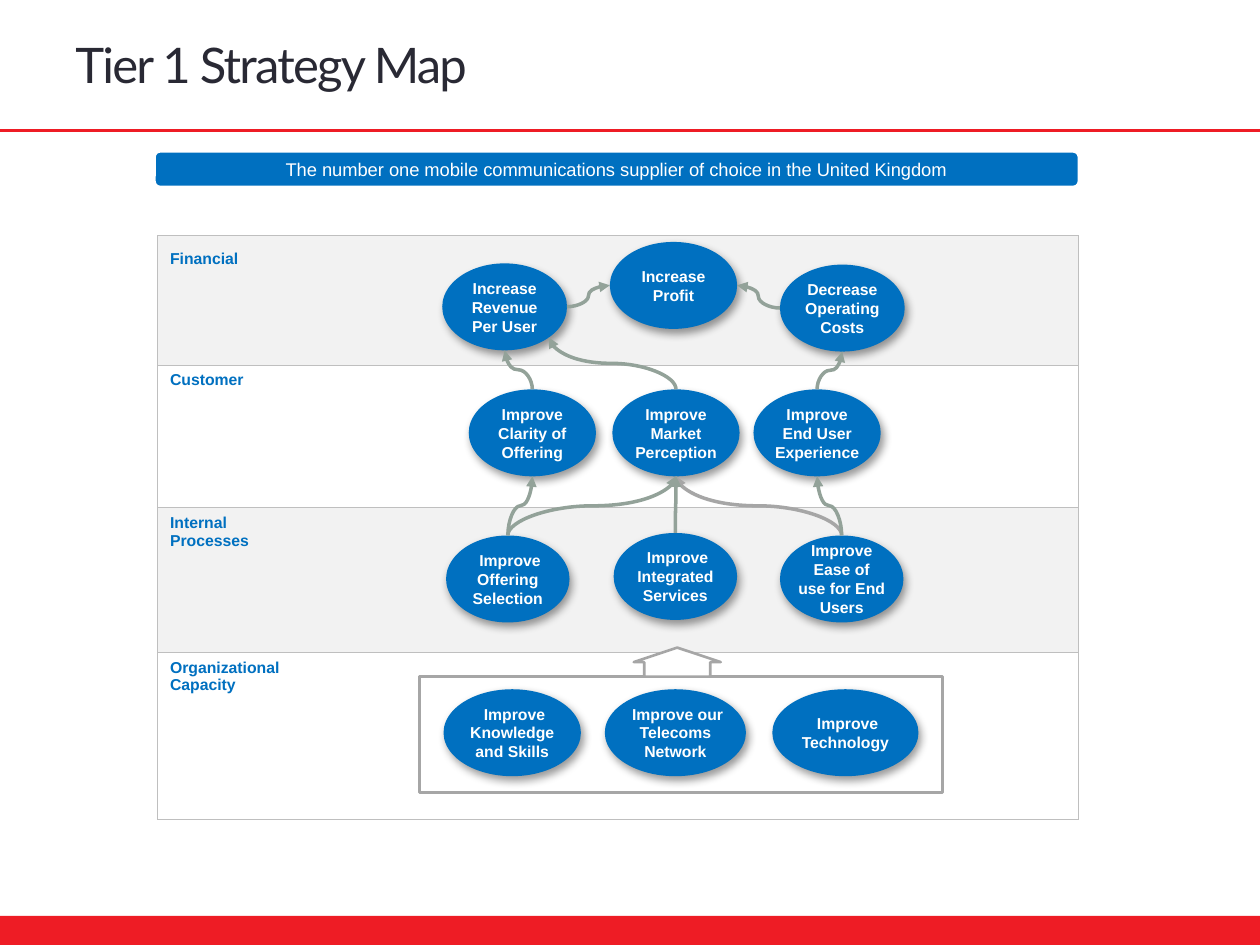
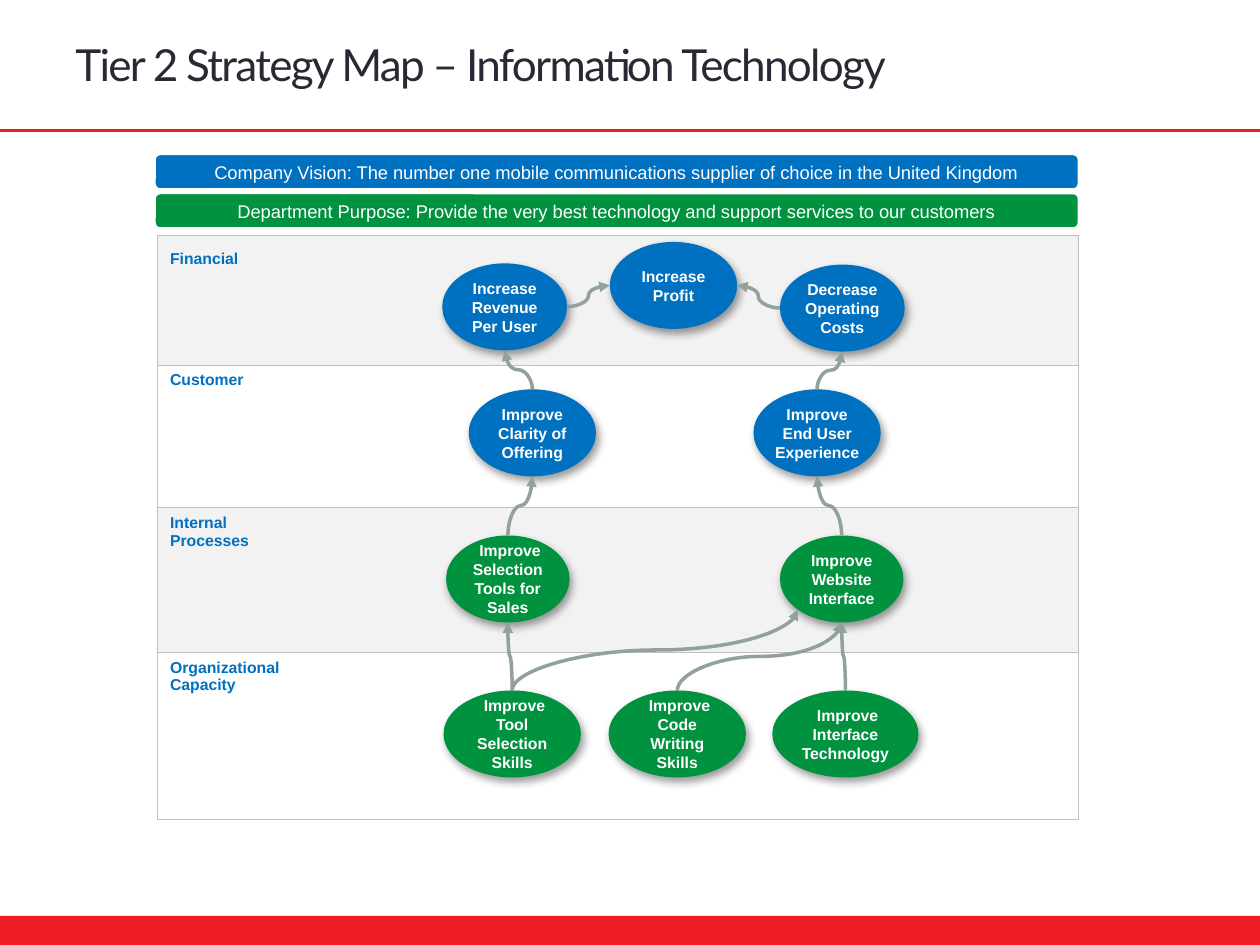
from lxml import etree
from pptx import Presentation
from pptx import util as u
from pptx.dml.color import RGBColor
from pptx.enum import shapes, text
from pptx.oxml import parse_xml
from pptx.oxml.ns import nsdecls, qn

BLUE, GREEN, RED, WHITE = "0070C0", "00923F", "EE1C25", "FFFFFF"
INK, PALE, RULE, GRAY, SAGE = "292934", "F2F2F2", "BFBFBF", "A6A6A6", "93A299"
KIND, LINK = shapes.MSO_SHAPE, shapes.MSO_CONNECTOR
CELL = u.Inches(10) // 100
COLS, ROWS = 100, 75
TALL = 6.9
DIAG = 0.707


def hue(code):
    return RGBColor.from_string(code)


def draw(page, kind, at, fill, edge=None, thick=1, words="", size=9, bold=False):
    shape = page.shapes.add_shape(kind, *[int(n * CELL) for n in at])
    shape.shadow.inherit = False
    shape.fill.solid()
    shape.fill.fore_color.rgb = hue(fill)
    if edge:
        shape.line.color.rgb = hue(edge)
        shape.line.width = u.Pt(thick)
    else:
        shape.line.fill.background()
    if words:
        frame = shape.text_frame
        frame.word_wrap = True
        frame.vertical_anchor = text.MSO_ANCHOR.MIDDLE
        line = frame.paragraphs[0]
        line.alignment = text.PP_ALIGN.CENTER
        run = line.add_run()
        run.text = words
        run.font.name = "Arial"
        run.font.size = u.Pt(size)
        run.font.bold = bold
        run.font.color.rgb = hue(WHITE)
    return shape


bands = [
    ("Financial", 10.3, PALE),
    ("Customer", 11.3, WHITE),
    ("Internal\nProcesses", 11.5, PALE),
    ("Organizational\nCapacity", 13.2, WHITE),
]

shared = {
    "rev": (35.1, 20.9, 9.9, BLUE, "Increase Revenue Per User"),
    "profit": (48.4, 19.2, 10.1, BLUE, "Increase Profit"),
    "cost": (61.9, 21, 9.9, BLUE, "Decrease Operating Costs"),
    "clear": (37.2, 30.9, 10.1, BLUE, "Improve Clarity of Offering"),
    "user": (59.8, 30.9, 10.1, BLUE, "Improve End User Experience"),
}
common = ["rev profit", "cost profit", "clear rev", "user cost"]

tiers = [
    {
        "title": "Tier 1 Strategy Map",
        "size": 28,
        "bars": [(12.05, BLUE, "The number one mobile communications supplier of choice in the United Kingdom")],
        "boxed": True,
        "goals": {
            "market": (48.6, 30.9, 10.1, BLUE, "Improve Market Perception"),
            "offer": (35.4, 42.5, 9.8, BLUE, " Improve Offering Selection"),
            "serve": (48.7, 42.3, 9.8, BLUE, " Improve Integrated Services"),
            "ease": (61.9, 42.5, 9.8, BLUE, "Improve Ease of use for End Users"),
            "skill": (35.2, 54.7, 10.9, BLUE, " Improve Knowledge and Skills"),
            "net": (48, 54.7, 11.2, BLUE, " Improve our Telecoms Network"),
            "tech": (61.3, 54.7, 11.6, BLUE, " Improve Technology"),
        },
        "links": ["ease market", "offer clear", "serve market", "market rev", "ease user", "offer market"],
    },
    {
        "title": "Tier 2 Strategy Map – Information Technology",
        "size": 25.2,
        "bars": [
            (12.25, BLUE, "Company Vision: The number one mobile communications supplier of choice in the United Kingdom"),
            (15.35, GREEN, "Department Purpose: Provide the very best technology and support services to our customers"),
        ],
        "boxed": False,
        "goals": {
            "sales": (35.4, 42.5, 9.8, GREEN, " Improve Selection Tools for Sales"),
            "web": (61.9, 42.5, 9.8, GREEN, "Improve Website Interface"),
            "tool": (35.2, 54.8, 10.9, GREEN, " Improve Tool Selection Skills"),
            "code": (48.3, 54.8, 10.9, GREEN, " Improve Code Writing Skills"),
            "tech": (61.3, 54.8, 11.6, GREEN, " Improve Interface Technology"),
        },
        "links": ["sales clear", "web user", "tool sales", "tool web", "code web", "tech web"],
    },
]
leans = {"market rev": 1, "tool web": -1}
tones = {"ease market": GRAY}

deck = Presentation()
deck.slide_width, deck.slide_height = COLS * CELL, ROWS * CELL

for tier in tiers:
    page = deck.slides.add_slide(deck.slide_layouts[6])
    draw(page, KIND.RECTANGLE, (0, 72.7, COLS, ROWS - 72.7), RED)
    rule = page.shapes.add_connector(LINK.STRAIGHT, 0, int(10.35 * CELL), COLS * CELL, int(10.35 * CELL))
    rule.line.color.rgb = hue(RED)
    rule.line.width = u.Pt(1.5)
    etree.SubElement(rule._element.spPr, qn("a:effectLst"))

    head = page.shapes.add_textbox(*[int(n * CELL) for n in (5, 1.5, 69.4, 7.2)]).text_frame
    head.word_wrap = True
    head.vertical_anchor = text.MSO_ANCHOR.MIDDLE
    head.margin_top = head.margin_bottom = 0
    run = head.paragraphs[0].add_run()
    run.text = tier["title"]
    run.font.name = "Lato"
    run.font.size = u.Pt(tier["size"])
    run.font.color.rgb = hue(INK)
    run._r.get_or_add_rPr().set("spc", "-100")

    high = sum(band[1] for band in bands)
    grid = page.shapes.add_table(len(bands), 1, *[int(n * CELL) for n in (12.5, 18.7, 73.1, high)]).table
    for row, (name, deep, fill) in enumerate(bands):
        grid.rows[row].height = int(deep * CELL)
        cell = grid.cell(row, 0)
        cell.fill.solid()
        cell.fill.fore_color.rgb = hue(fill)
        cell.margin_top = u.Inches(0.05 if row else 0.12)
        line = cell.text_frame.paragraphs[0]
        for part, words in enumerate(name.split("\n")):
            if part:
                line.add_line_break()
            run = line.add_run()
            run.text = words
            run.font.name = "Arial"
            run.font.size = u.Pt(9)
            run.font.bold = True
            run.font.color.rgb = hue(BLUE)
        for spot, side in enumerate("LRTB"):
            cell._tc.get_or_add_tcPr().insert(spot, parse_xml(
                f'<a:ln{side} {nsdecls("a")} w="6350"><a:solidFill>'
                f'<a:srgbClr val="{RULE}"/></a:solidFill></a:ln{side}>'))

    for top, fill, words in tier["bars"]:
        bar = draw(page, KIND.ROUNDED_RECTANGLE, (12.3, top, 73.3, 2.75), fill, WHITE, 1, words, 10.5)
        bar.adjustments[0] = 0.15

    if tier["boxed"]:
        draw(page, KIND.RECTANGLE, (33.3, 53.7, 41.5, 9.2), WHITE, GRAY, 1.5)
        arrow = draw(page, KIND.UP_ARROW, (50.3, 51.4, 6.9, 2.3), WHITE, GRAY, 1.5)
        arrow.adjustments[0] = 0.76

    goals = {**shared, **tier["goals"]}
    for left, top, wide, fill, words in goals.values():
        oval = draw(page, KIND.OVAL, (left, top, wide, TALL), fill, words=words, bold=True)
        frame = oval.text_frame
        frame.margin_left = frame.margin_right = frame.margin_top = frame.margin_bottom = 0
        oval._element.spPr.find(qn("a:effectLst")).append(parse_xml(
            f'<a:outerShdw {nsdecls("a")} blurRad="63500" dist="38100" dir="3600000" algn="tl" rotWithShape="0">'
            '<a:srgbClr val="000000"><a:alpha val="40000"/></a:srgbClr></a:outerShdw>'))

    for link in common + tier["links"]:
        (x1, y1, w1), (x2, y2, w2) = [goals[name][:3] for name in link.split()]
        turn = 0
        if link.endswith("profit"):
            side = 1 if x1 < x2 else -1
            ends = (x1 + w1 / 2 + side * w1 / 2, y1 + TALL / 2,
                    x2 + w2 / 2 - side * w2 / 2, y2 + TALL / 2)
        else:
            lean = leans.get(link, 0)
            share = DIAG if lean else 1
            x1, x2 = x1 + w1 / 2, x2 + w2 / 2 + lean * DIAG * w2 / 2
            y2 += TALL / 2 * (1 + share)
            side = 1 if x2 > x1 else -1
            turn = 90 if side > 0 else 270
            midx, midy = (x1 + x2) / 2, (y1 + y2) / 2
            run, rise = abs(x2 - x1) / 2, (y1 - y2) / 2
            ends = midx + side * rise, midy + run, midx - side * rise, midy - run
        curve = page.shapes.add_connector(LINK.CURVE, *[int(n * CELL) for n in ends])
        curve.line.color.rgb = hue(tones.get(link, SAGE))
        curve.line.width = u.Pt(2)
        etree.SubElement(curve.line._get_or_add_ln(), qn("a:tailEnd"), type="triangle")
        etree.SubElement(curve._element.spPr, qn("a:effectLst"))
        if turn:
            curve._element.spPr.find(qn("a:xfrm")).set("rot", str(turn * 60000))

deck.save("out.pptx")
